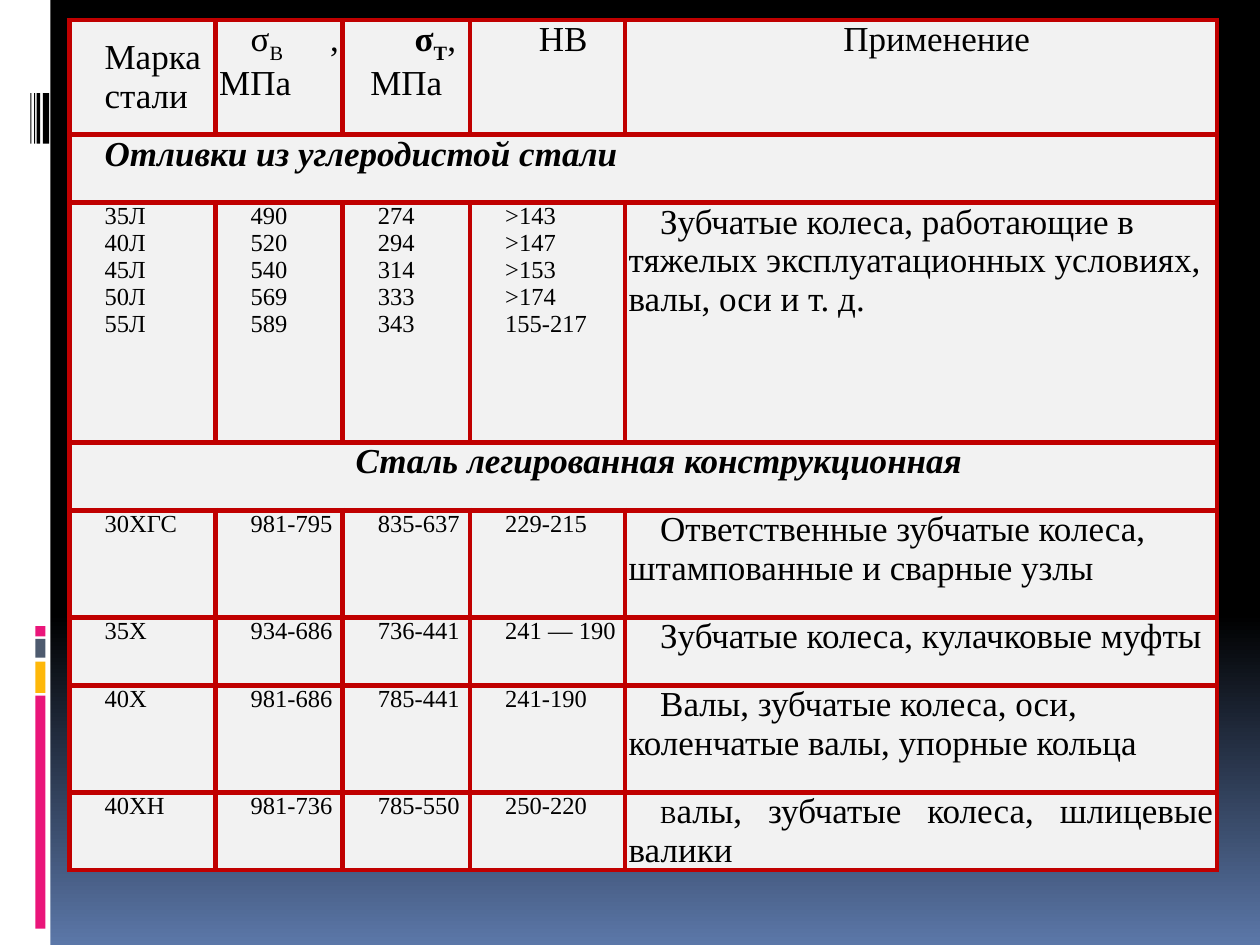
from dataclasses import dataclass
from typing import Optional, Union

from lxml import etree
from pptx import Presentation
from pptx import util as u
from pptx.dml import color
from pptx.enum import shapes, text
from pptx.oxml import ns

SLIDE_WIDTH, SLIDE_HEIGHT = u.Inches(10), u.Inches(7.5)
GRID_COLUMNS, GRID_ROWS = 100, 75
JUSTIFY, CENTER, LEFT = text.PP_ALIGN.JUSTIFY, text.PP_ALIGN.CENTER, text.PP_ALIGN.LEFT


@dataclass(frozen=True)
class Theme:
    font: str = "Times New Roman"
    large: float = 20
    small: float = 14
    ink: str = "000000"
    paper: str = "FFFFFF"
    cell: str = "F2F2F2"
    border: str = "C00000"
    border_width: float = 3
    night: str = "000000"
    dusk: str = "5B77A8"
    pink: str = "EA157A"
    yellow: str = "FEB80A"
    slate: str = "4E5B6F"


THEME = Theme()


@dataclass(frozen=True)
class Bar:
    """A plain rectangle placed in grid columns and rows."""
    left: float
    top: float
    width: float
    height: float
    fill: str


@dataclass(frozen=True)
class Run:
    words: str
    size: Optional[float] = None
    bold: bool = False
    subscript: bool = False


Content = Union[str, list[Run]]


@dataclass(frozen=True)
class Entry:
    """Content of one table cell; a line break in a string starts a paragraph."""
    content: Content
    size: float = THEME.small
    align: text.PP_ALIGN = JUSTIFY
    emphasis: bool = False
    indent: float = 2.5
    anchor: text.MSO_ANCHOR = text.MSO_ANCHOR.TOP


SIDE_BARS = [
    Bar(0, 0, 4, 75, THEME.paper),
    Bar(2.8, 55.2, 0.8, 18.5, THEME.pink),
    Bar(2.8, 52.5, 0.8, 2.5, THEME.yellow),
    Bar(2.8, 50.7, 0.8, 1.5, THEME.slate),
    Bar(2.8, 49.7, 0.8, 0.8, THEME.pink),
    *(Bar(left, 7.4, width, 4, THEME.ink)
      for left, width in ((3.4, 0.5), (2.9, 0.3), (2.7, 0.1), (2.4, 0.1))),
]

TABLE_LEFT, TABLE_TOP = 5.5, 1.6
COLUMN_WIDTHS = (11.6, 10.1, 10.1, 12.3, 47)
ROW_HEIGHTS = (9.1, 5.4, 19, 5.4, 8.5, 5.4, 8.5, 6)


def section(title: str, align: text.PP_ALIGN) -> list[Entry]:
    return [Entry(title, THEME.large, align, emphasis=True)]


def steel(grade: str, strength: str, yield_point: str, hardness: str,
          usage: Content, align: text.PP_ALIGN = LEFT) -> list[Entry]:
    figures = [Entry(value) for value in (grade, strength, yield_point, hardness)]
    return [*figures, Entry(usage, THEME.large, align)]


STEEL_ROWS = [
    [
        Entry("Марка\nстали", THEME.large, anchor=text.MSO_ANCHOR.MIDDLE),
        Entry([Run("σ"), Run("B ", subscript=True), Run(", МПа")], THEME.large),
        Entry([Run("σ", bold=True), Run("T", bold=True, subscript=True), Run(", МПа")],
              THEME.large, CENTER, indent=4.6),
        Entry("НВ", THEME.large, CENTER),
        Entry("Применение", THEME.large, CENTER),
    ],
    section("Отливки из углеродистой стали", JUSTIFY),
    steel("35Л\n40Л\n45Л\n50Л\n55Л", "490\n520\n540\n569\n589",
          "274\n294\n314\n333\n343", ">143\n>147\n>153\n>174\n155-217",
          "Зубчатые колеса, работающие в тяжелых эксплуатационных условиях, "
          "валы, оси и т. д."),
    section("Сталь легированная конструкционная", CENTER),
    steel("30ХГС", "981-795", "835-637", "229-215",
          "Ответственные зубчатые колеса, штампованные и сварные узлы"),
    steel("35Х", "934-686", "736-441", "241 — 190",
          "Зубчатые колеса, кулачковые муфты", JUSTIFY),
    steel("40Х", "981-686", "785-441", "241-190",
          "Валы, зубчатые колеса, оси, коленчатые валы, упорные кольца"),
    steel("40ХН", "981-736", "785-550", "250-220",
          [Run("В", size=THEME.small), Run("алы, зубчатые колеса, шлицевые валики")],
          JUSTIFY),
]


def across(columns: float) -> int:
    return round(SLIDE_WIDTH * columns / GRID_COLUMNS)


def down(rows: float) -> int:
    return round(SLIDE_HEIGHT * rows / GRID_ROWS)


def rgb(value: str) -> color.RGBColor:
    return color.RGBColor.from_string(value)


def write(frame, content: Content, *, size: float, align: text.PP_ALIGN,
          emphasis: bool, indent: float) -> None:
    if isinstance(content, str):
        paragraphs = [[Run(line, bold=emphasis)] for line in content.split("\n")]
    else:
        paragraphs = [content]
    for index, runs in enumerate(paragraphs):
        paragraph = frame.add_paragraph() if index else frame.paragraphs[0]
        paragraph.alignment = align
        properties = paragraph._p.get_or_add_pPr()
        properties.set("marL", "0")
        properties.set("indent", str(across(indent)))
        for part in runs:
            run = paragraph.add_run()
            run.text = part.words
            run.font.name = THEME.font
            run.font.size = u.Pt(part.size or size)
            run.font.bold, run.font.italic = part.bold, emphasis
            run.font.color.rgb = rgb(THEME.ink)
            if part.subscript:
                run._r.get_or_add_rPr().set("baseline", "-25000")


def outline(cell) -> None:
    properties = cell._tc.get_or_add_tcPr()
    for index, side in enumerate(("lnL", "lnR", "lnT", "lnB")):
        line = etree.Element(ns.qn(f"a:{side}"), w=str(u.Pt(THEME.border_width)))
        fill = etree.SubElement(line, ns.qn("a:solidFill"))
        etree.SubElement(fill, ns.qn("a:srgbClr"), val=THEME.border)
        properties.insert(index, line)


def paint_background(slide) -> None:
    fill = slide.background.fill
    fill.gradient()
    fill.gradient_angle = 270
    for stop, (position, tint) in zip(fill.gradient_stops,
                                      ((0.65, THEME.night), (1, THEME.dusk))):
        stop.position = position
        stop.color.rgb = rgb(tint)


def draw_bar(slide, bar: Bar) -> None:
    shape = slide.shapes.add_shape(
        shapes.MSO_SHAPE.RECTANGLE, across(bar.left), down(bar.top),
        across(bar.width), down(bar.height))
    shape.shadow.inherit = False
    shape.fill.solid()
    shape.fill.fore_color.rgb = rgb(bar.fill)
    shape.line.fill.background()


def draw_steel_table(slide) -> None:
    table = slide.shapes.add_table(
        len(ROW_HEIGHTS), len(COLUMN_WIDTHS), across(TABLE_LEFT), down(TABLE_TOP),
        across(sum(COLUMN_WIDTHS)), down(sum(ROW_HEIGHTS))).table
    table.first_row = table.horz_banding = False
    for column, width in zip(table.columns, COLUMN_WIDTHS):
        column.width = across(width)
    for row, height in zip(table.rows, ROW_HEIGHTS):
        row.height = down(height)
    for cell in table.iter_cells():
        cell.margin_left = cell.margin_right = across(0.3)
        cell.margin_top = cell.margin_bottom = 0
        cell.fill.solid()
        cell.fill.fore_color.rgb = rgb(THEME.cell)
        outline(cell)
    for row_index, entries in enumerate(STEEL_ROWS):
        if len(entries) == 1:
            table.cell(row_index, 0).merge(table.cell(row_index, len(COLUMN_WIDTHS) - 1))
        for column_index, entry in enumerate(entries):
            cell = table.cell(row_index, column_index)
            cell.vertical_anchor = entry.anchor
            write(cell.text_frame, entry.content, size=entry.size, align=entry.align,
                  emphasis=entry.emphasis, indent=entry.indent)


def main() -> None:
    deck = Presentation()
    deck.slide_width, deck.slide_height = SLIDE_WIDTH, SLIDE_HEIGHT
    slide = deck.slides.add_slide(deck.slide_layouts[6])
    paint_background(slide)
    for bar in SIDE_BARS:
        draw_bar(slide, bar)
    draw_steel_table(slide)
    deck.save("out.pptx")


if __name__ == "__main__":
    main()
